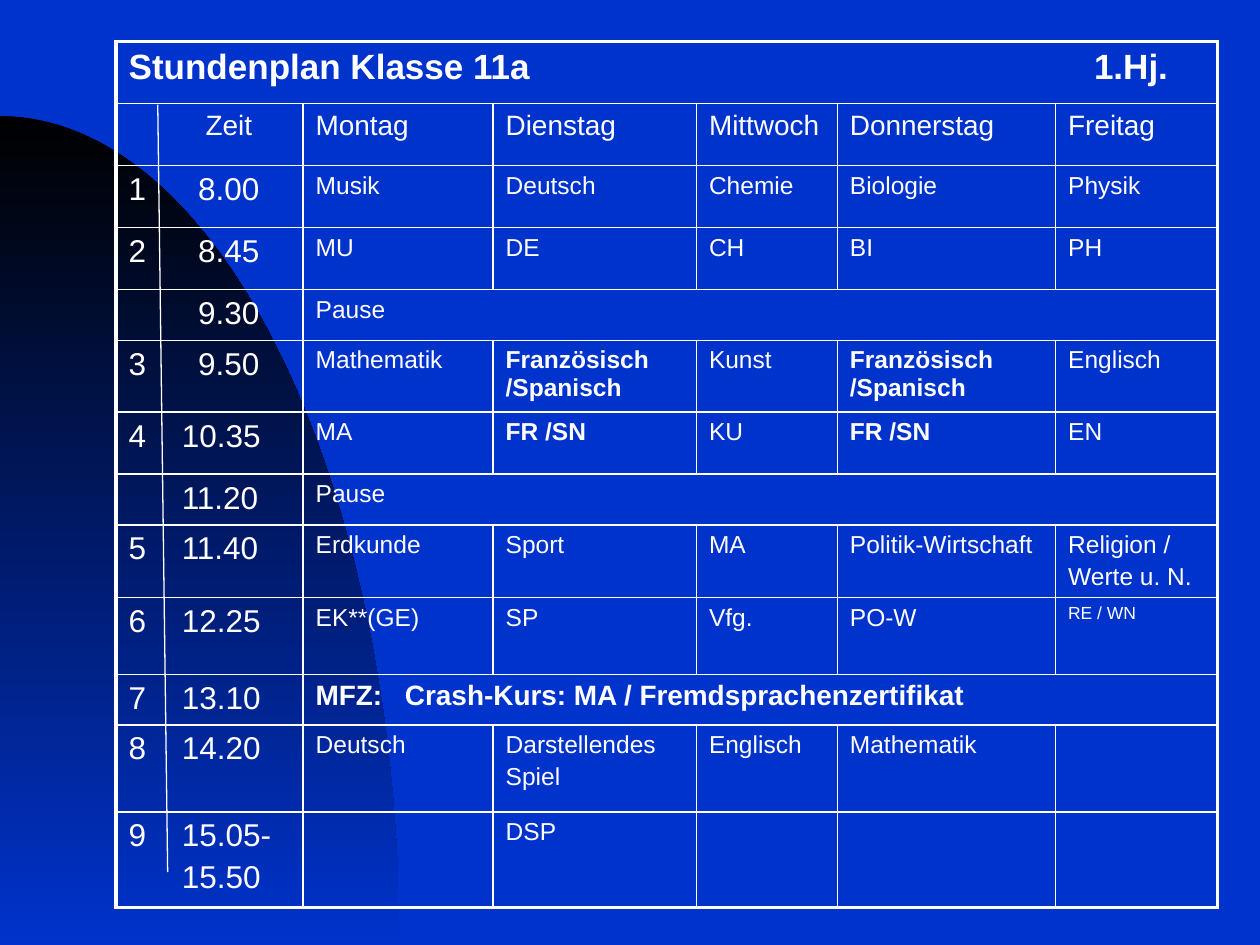
import math
from dataclasses import dataclass

from lxml import etree
from pptx import Presentation
from pptx.dml.color import RGBColor
from pptx.enum.shapes import MSO_CONNECTOR
from pptx.oxml.ns import qn
from pptx.util import Cm, Pt

STRAIGHT = MSO_CONNECTOR.STRAIGHT
BLANK_LAYOUT = 6


@dataclass(frozen=True)
class Theme:
    blue: str = "0033CC"
    black: str = "000000"
    white: str = "FFFFFF"
    font: str = "Arial"
    title: int = 20
    heading: int = 16
    time: int = 18
    subject: int = 14
    small: int = 10
    outer_line: float = 2.25
    inner_line: float = 1
    divider_line: float = 0.75
    paragraph_gap: float = 0.2  # share of the type size


THEME = Theme()


@dataclass(frozen=True)
class Entry:
    """One cell: line breaks separate paragraphs, the tab stop is in cm."""
    text: str
    size: int = THEME.subject
    bold: bool = False
    tab: float = 0


@dataclass(frozen=True)
class Row:
    height: float
    entries: list[Entry]


# Column widths and row heights in cm
COLUMNS = [3.77, 3.83, 4.10, 2.84, 4.40, 3.27]
NORMAL, LOW, HIGH = 1.25, 1.02, 1.45


def lesson(height: float, number: str, times: list[str], *subjects: str | Entry) -> Row:
    """Period number and time, followed by the subjects of the days."""
    tab = 1.4 if len(times[0]) == 4 else 1.07
    start = "\n".join(f"{number if i == 0 else ''}\t{time}" for i, time in enumerate(times))
    entries = [s if isinstance(s, Entry) else Entry(s) for s in subjects]
    return Row(height, [Entry(start, THEME.time, tab=tab), *entries])


LANGUAGES = Entry("Französisch /Spanisch", bold=True)
LANGUAGES_SHORT = Entry("FR /SN", bold=True)
DAYS = ["Montag", "Dienstag", "Mittwoch", "Donnerstag", "Freitag"]

TIMETABLE = [
    Row(NORMAL, [Entry("Stundenplan Klasse 11a\t1.Hj.", THEME.title, True, 19.46)]),
    Row(NORMAL, [Entry("\tZeit", THEME.heading, tab=1.55),
                 *(Entry(day, THEME.heading) for day in DAYS)]),
    lesson(NORMAL, "1", ["8.00"], "Musik", "Deutsch", "Chemie", "Biologie", "Physik"),
    lesson(NORMAL, "2", ["8.45"], "MU", "DE", "CH", "BI", "PH"),
    lesson(LOW, "", ["9.30"], "Pause"),
    lesson(HIGH, "3", ["9.50"], "Mathematik", LANGUAGES, "Kunst", LANGUAGES, "Englisch"),
    lesson(NORMAL, "4", ["10.35"], "MA", LANGUAGES_SHORT, "KU", LANGUAGES_SHORT, "EN"),
    lesson(LOW, "", ["11.20"], "Pause"),
    lesson(HIGH, "5", ["11.40"], "Erdkunde", "Sport", "MA", "Politik-Wirtschaft",
           "Religion /\nWerte u. N."),
    lesson(1.55, "6", ["12.25"], "EK**(GE)", "SP", "Vfg.", "PO-W",
           Entry("RE / WN", THEME.small)),
    lesson(LOW, "7", ["13.10"],
           Entry("MFZ:\tCrash-Kurs: MA / Fremdsprachenzertifikat", THEME.heading, True, 1.8)),
    lesson(1.75, "8", ["14.20"], "Deutsch", "Darstellendes\nSpiel", "Englisch",
           "Mathematik", ""),
    lesson(1.93, "9", ["15.05-", "15.50"], "", "DSP", "", "", ""),
]


def color(value: str) -> RGBColor:
    return RGBColor.from_string(value)


def draw_arc(slide, width: float, top: float, bottom: float, steps: int = 90) -> None:
    """Quarter ellipse in the lower left corner, fading into the background."""
    angles = [math.pi / 2 * i / steps for i in range(steps + 1)]
    points = [(Cm(width * math.sin(a)), Cm(bottom - (bottom - top) * math.cos(a)))
              for a in angles]
    builder = slide.shapes.build_freeform(*points[0])
    builder.add_line_segments(points[1:] + [(0, Cm(bottom))], close=True)
    arc = builder.convert_to_shape()
    arc.shadow.inherit = False
    arc.line.fill.background()
    arc.fill.gradient()
    arc.fill.gradient_angle = 270
    for stop, value, position in zip(arc.fill.gradient_stops,
                                     (THEME.black, THEME.blue), (0, 1)):
        stop.color.rgb = color(value)
        stop.position = position


def write_entry(cell, entry: Entry) -> None:
    if not entry.text:
        return
    font_format = {"name": THEME.font, "size": Pt(entry.size), "bold": entry.bold}
    frame = cell.text_frame
    for i, line in enumerate(entry.text.split("\n")):
        paragraph = frame.add_paragraph() if i else frame.paragraphs[0]
        if i:
            paragraph.space_before = Pt(entry.size * THEME.paragraph_gap)
        if entry.tab:
            properties = paragraph._p.get_or_add_pPr()
            tabs = etree.SubElement(properties, qn("a:tabLst"))
            etree.SubElement(tabs, qn("a:tab"), pos=str(Cm(entry.tab)), algn="l")
        run = paragraph.add_run()
        run.text = line
        for attribute, value in font_format.items():
            setattr(run.font, attribute, value)
        run.font.color.rgb = color(THEME.white)


def set_borders(cell, outer_edges: dict[str, bool]) -> None:
    properties = cell._tc.get_or_add_tcPr()
    for edge, is_outer in outer_edges.items():
        width = THEME.outer_line if is_outer else THEME.inner_line
        line = etree.SubElement(properties, qn(f"a:ln{edge}"), w=str(Pt(width)))
        fill = etree.SubElement(line, qn("a:solidFill"))
        etree.SubElement(fill, qn("a:srgbClr"), val=THEME.white)


def draw_timetable(slide, rows: list[Row], left: float, top: float) -> None:
    last_row, last_column = len(rows) - 1, len(COLUMNS) - 1
    table = slide.shapes.add_table(len(rows), len(COLUMNS), Cm(left), Cm(top),
                                   Cm(sum(COLUMNS)), Cm(sum(r.height for r in rows))).table
    table.first_row = table.horz_banding = False
    for column, width in zip(table.columns, COLUMNS):
        column.width = Cm(width)

    for r, row in enumerate(rows):
        table.rows[r].height = Cm(row.height)
        # The last entry of a short row runs to the right edge
        final = len(row.entries) - 1
        if final < last_column:
            table.cell(r, final).merge(table.cell(r, last_column))
        for c in range(len(COLUMNS)):
            cell = table.cell(r, c)
            edges = {"L": c == 0, "R": c >= final, "T": r == 0, "B": r == last_row}
            if cell.is_spanned:
                del edges["L"]
                if c < last_column:
                    del edges["R"]
            set_borders(cell, edges)
            cell.fill.background()
        for c, entry in enumerate(row.entries):
            write_entry(table.cell(r, c), entry)


def draw_divider(slide, x1: float, y1: float, x2: float, y2: float) -> None:
    divider = slide.shapes.add_connector(STRAIGHT, Cm(x1), Cm(y1), Cm(x2), Cm(y2))
    divider.line.color.rgb = color(THEME.white)
    divider.line.width = Pt(THEME.divider_line)
    etree.SubElement(divider._element.spPr, qn("a:effectLst"))


def main() -> None:
    presentation = Presentation()
    presentation.slide_width, presentation.slide_height = Cm(25.4), Cm(19.05)
    slide = presentation.slides.add_slide(presentation.slide_layouts[BLANK_LAYOUT])

    # Background
    slide.background.fill.solid()
    slide.background.fill.fore_color.rgb = color(THEME.blue)
    draw_arc(slide, width=8.05, top=2.34, bottom=19.05)

    # Timetable and the line between period numbers and times
    draw_timetable(slide, TIMETABLE, left=2.34, top=0.84)
    draw_divider(slide, 3.18, 2.11, 3.38, 17.58)

    presentation.save("out.pptx")


if __name__ == "__main__":
    main()
